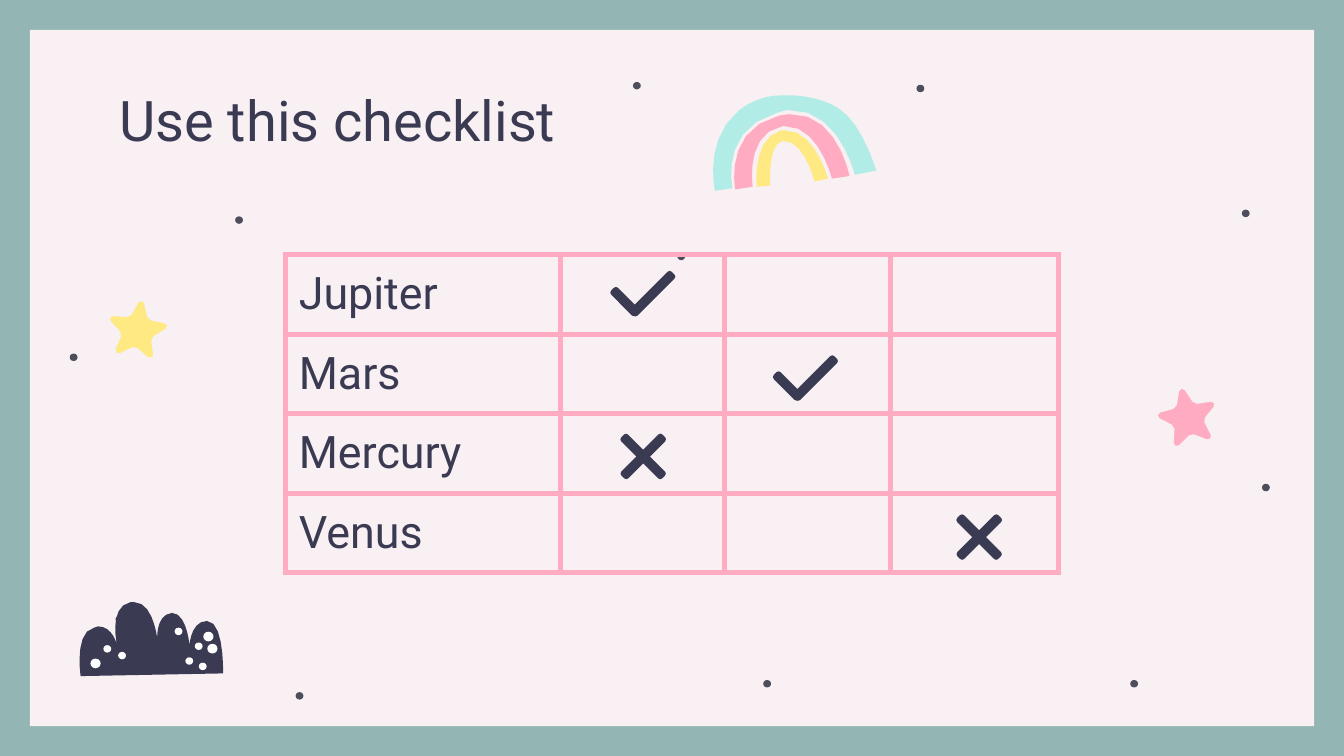
import math
from collections import namedtuple

from lxml import etree
from pptx import Presentation
from pptx import util as u
from pptx.dml.color import RGBColor
from pptx.enum import shapes as kinds, text
from pptx.oxml import ns

Pt = u.Pt
Box = namedtuple("Box", "left top width height")

TEAL = RGBColor(0x93, 0xB5, 0xB3)
BLUSH = RGBColor(0xF8, 0xF0, 0xF2)
GREY = RGBColor(0x4D, 0x4D, 0x5C)
INK = RGBColor(0x3A, 0x3A, 0x53)
PINK = RGBColor(0xFF, 0xAB, 0xC1)
YELLOW = RGBColor(0xFF, 0xE9, 0x83)
MINT = RGBColor(0xB2, 0xEC, 0xE7)
WHITE = RGBColor(0xFF, 0xFF, 0xFF)

FONT = "Roboto"
UNIT = 0.72
MOST_STEPS = 7

SKY_DOTS = [(157.7, 370.8), (61.2, 329.8), (36.7, 189.4), (125.3, 115.9),
            (338.4, 43.9), (490.3, 45.4), (362.2, 135.4), (664.6, 112.3),
            (675.4, 259.2), (604.8, 364.3), (408.2, 364.3)]
RAINBOW = [
    (PINK, [(64, 15), (62, 15, 59, 16, 57, 16), (15, 26, 24, 71, 24, 71), (37, 69),
            (37, 69, 31, 29, 59, 24), (60, 24, 60, 24, 61, 24),
            (86, 23, 96, 63, 96, 63), (109, 61), (109, 61, 100, 13, 64, 15)]),
    (YELLOW, [(61, 27), (60, 27, 59, 27, 58, 27), (36, 33, 40, 69, 40, 69), (50, 68),
              (50, 68, 48, 37, 59, 35), (59, 35, 59, 35, 60, 35),
              (75, 34, 83, 65, 83, 65), (93, 63), (93, 63, 83, 26, 61, 27)]),
    (MINT, [(58, 1), (47, 1, 36, 5, 27, 12), (0, 34, 9, 72, 9, 72), (22, 70),
            (22, 70, 12, 26, 55, 14), (58, 13, 61, 12, 64, 12),
            (101, 10, 113, 60, 113, 60), (129, 57), (129, 57, 118, 20, 100, 10),
            (90, 4, 74, 0, 58, 1)]),
]
CLOUD = [(45, 0), (44, 0, 43, 0, 42, 0), (27, 3, 31, 27, 32, 31),
         (31, 29, 28, 18, 18, 18), (17, 18, 16, 18, 15, 19), (0, 22, 5, 55, 5, 55),
         (111, 53), (111, 53, 112, 14, 99, 14), (87, 14, 86, 32, 86, 32),
         (86, 32, 84, 8, 73, 8), (61, 9, 62, 27, 62, 27), (62, 27, 59, 0, 45, 0)]
CLOUD_DOTS = [(95, 22, 1.3), (98, 31, 1.3), (11, 42, 1.3), (89, 30, 1), (74, 19, 1),
              (32, 37, 1), (92, 45, 1), (82, 41, 1), (21, 32, 1)]
CHECK = [(0, 4.3, 15.8, 45), (8.6, 0, 28.1, 135)]
CROSS = [(0, 0, 28.1, 135), (0, 0, 28.1, 225)]
PLANETS = ["Jupiter", "Mars", "Mercury", "Venus"]


def flatten(segments):
    points = [segments[0]]
    for segment in segments[1:]:
        if len(segment) == 2:
            points.append(segment)
            continue
        controls = (points[-1], segment[0:2], segment[2:4], segment[4:6])
        span = sum(max(axis) - min(axis) for axis in zip(*controls))
        steps = min(MOST_STEPS, math.ceil(span / 4))
        for step in range(1, steps + 1):
            t = step / steps
            weights = ((1 - t) ** 3, 3 * t * (1 - t) ** 2, 3 * t * t * (1 - t), t ** 3)
            points.append(tuple(sum(weight * value for weight, value in zip(weights, axis))
                                for axis in zip(*controls)))
    return points


def paint(shape, color):
    shape.shadow.inherit = False
    shape.fill.solid()
    shape.fill.fore_color.rgb = color
    shape.line.fill.background()


def add_outline(slide, left, top, segments, color):
    points = [(Pt(x * UNIT), Pt(y * UNIT)) for x, y in flatten(segments)]
    builder = slide.shapes.build_freeform(*points[0])
    builder.add_line_segments(points[1:], close=True)
    shape = builder.convert_to_shape(Pt(left), Pt(top))
    paint(shape, color)
    return shape


def add_dot(slide, left, top, color, scale=1):
    dot = slide.shapes.add_shape(kinds.MSO_SHAPE.OVAL, Pt(left + 0.7 * scale), Pt(top),
                                 Pt(4.2 * scale), Pt(4 * scale))
    paint(dot, color)


def add_sky(slide, box):
    panel = slide.shapes.add_shape(kinds.MSO_SHAPE.RECTANGLE, *map(Pt, box))
    paint(panel, BLUSH)
    for left, top in SKY_DOTS:
        add_dot(slide, left, top, GREY)


def add_title(slide, box, wording):
    title = slide.shapes.title
    title.element.getparent().append(title.element)
    title.left, title.top, title.width, title.height = map(Pt, box)
    frame = title.text_frame
    frame.word_wrap = True
    frame.auto_size = text.MSO_AUTO_SIZE.NONE
    frame.vertical_anchor = text.MSO_ANCHOR.MIDDLE
    frame.margin_left = frame.margin_right = Pt(7.2)
    frame.margin_top = frame.margin_bottom = Pt(7.2)
    frame.paragraphs[0].alignment = text.PP_ALIGN.LEFT
    add_run(frame.paragraphs[0], wording, 30)


def add_run(paragraph, wording, size):
    run = paragraph.add_run()
    run.text = wording
    run.font.name = FONT
    run.font.size = Pt(size)
    run.font.color.rgb = INK


def add_borders(cell):
    properties = cell._tc.get_or_add_tcPr()
    for position, side in enumerate(("lnL", "lnR", "lnT", "lnB")):
        line = etree.Element(ns.qn("a:" + side), w=str(Pt(3)))
        fill = etree.SubElement(line, ns.qn("a:solidFill"))
        etree.SubElement(fill, ns.qn("a:srgbClr"), val=str(PINK))
        properties.insert(position, line)


def add_checklist(slide, box):
    frame = slide.shapes.add_table(len(PLANETS), 4, *map(Pt, box))
    table = frame.table
    table.first_row = table.horz_banding = False
    for column, width in zip(table.columns, (147.6, 87.8, 88.6, 90)):
        column.width = Pt(width)
    for row, planet in zip(table.rows, PLANETS):
        row.height = Pt(box.height / len(PLANETS))
        for cell in row.cells:
            cell.fill.background()
            cell.margin_left = cell.margin_right = Pt(7.2)
            cell.margin_top = cell.margin_bottom = Pt(7.2)
            add_borders(cell)
        add_run(row.cells[0].text_frame.paragraphs[0], planet, 24)


def add_mark(slide, left, top, bars):
    for x, y, length, angle in bars:
        bar = slide.shapes.add_shape(kinds.MSO_SHAPE.RECTANGLE, Pt(left + x), Pt(top + y),
                                     Pt(length), Pt(2.2))
        paint(bar, INK)
        bar.line.color.rgb = INK
        bar.line.width = Pt(3)
        bar.rotation = angle


def add_rainbow(slide, left, top):
    for color, band in RAINBOW:
        add_outline(slide, left, top, band, color)


def add_cloud(slide, left, top):
    add_outline(slide, left, top, CLOUD, INK)
    for x, y, scale in CLOUD_DOTS:
        add_dot(slide, left + x * UNIT, top + y * UNIT, WHITE, scale)


def add_star(slide, left, top, color, rotation):
    arm = [(-5.8, -11.3), (-2.1, -20.9), (-1.5, -22.9, 1.5, -22.9, 2.1, -20.9), (5.8, -11.3)]
    segments = []
    for turn in range(5):
        cos, sin = math.cos(turn * math.tau / 5), math.sin(turn * math.tau / 5)
        for segment in arm:
            pairs = zip(segment[::2], segment[1::2])
            segments.append(tuple(value for x, y in pairs for value in
                                  (21.5 + x * cos - y * sin, 22.3 + x * sin + y * cos)))
    add_outline(slide, left, top, segments, color).rotation = rotation


def main():
    presentation = Presentation()
    presentation.slide_width, presentation.slide_height = Pt(720), Pt(405)
    slide = presentation.slides.add_slide(presentation.slide_layouts[5])
    slide.background.fill.solid()
    slide.background.fill.fore_color.rgb = TEAL
    add_sky(slide, Box(16, 16, 688, 373))
    add_title(slide, Box(56.7, 42.5, 607, 42.5), "Use this checklist")
    add_checklist(slide, Box(152.9, 136.4, 414, 158.4))
    add_rainbow(slide, 376.6, 50.4)
    add_cloud(slide, 39.6, 322.6)
    add_star(slide, 58.3, 161.3, YELLOW, 8)
    add_star(slide, 620.6, 208.1, PINK, 347.9)
    add_mark(slide, 326.9, 156.2, CHECK)
    add_mark(slide, 330.5, 243.4, CROSS)
    add_mark(slide, 414, 201.4, CHECK)
    add_mark(slide, 510.5, 286.6, CROSS)
    presentation.save("out.pptx")


if __name__ == "__main__":
    main()
